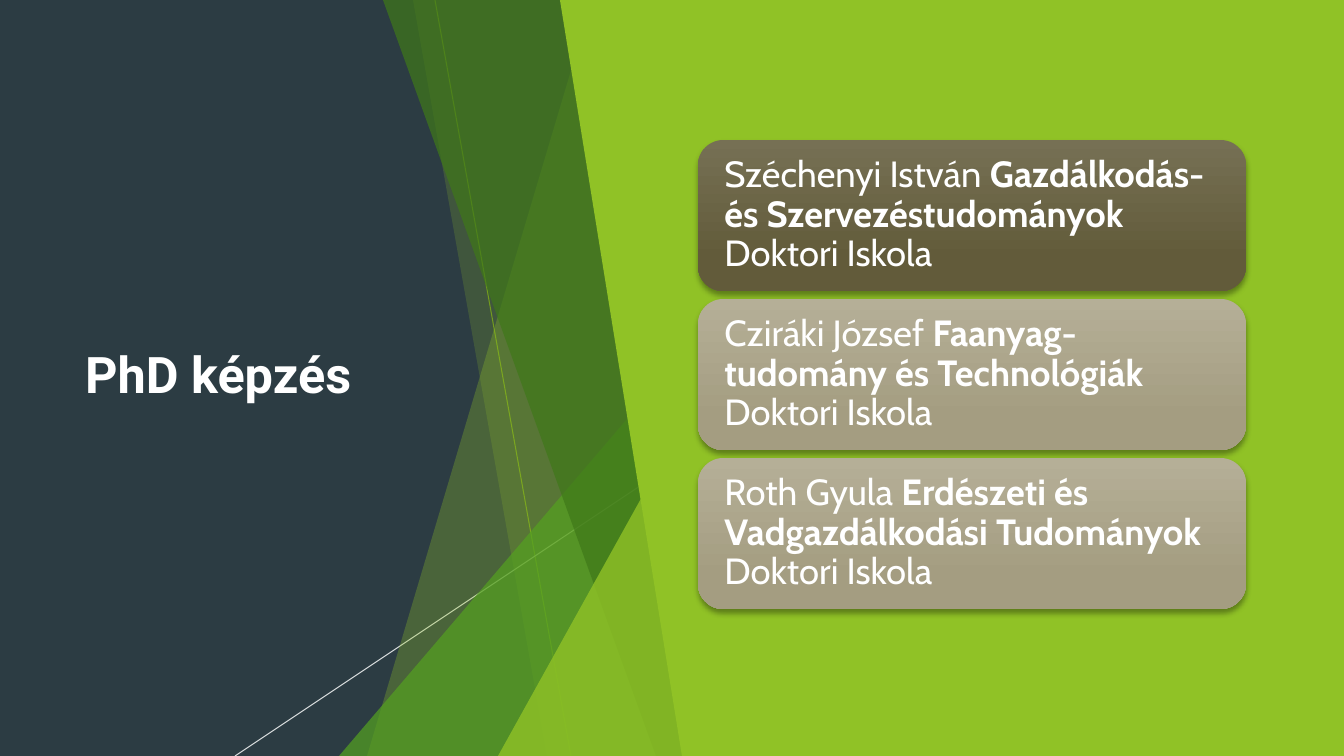
from dataclasses import dataclass

import pptx
import pptx.dml.color
import pptx.enum.shapes
import pptx.enum.text
import pptx.oxml.ns
import pptx.util
from lxml import etree

WIDTH, HEIGHT = 1344, 756
EMU_PER_PX = 12192000 / WIDTH


@dataclass(frozen=True)
class Theme:
    dark: str = "2C3C43"
    lime: str = "90C226"
    leaf: str = "54A021"
    forest: str = "3F7819"
    olive: str = "6C921D"
    white: str = "FFFFFF"
    shadow: str = "000000"
    strong_card: tuple = ("767054", "625B3A")
    soft_card: tuple = ("B5AF97", "A49D81")
    title_font: str = "Roboto"
    card_font: str = "Cabin"
    title_size: int = 36
    card_size: int = 26


THEME = Theme()


def px(length):
    return pptx.util.Emu(round(length * EMU_PER_PX))


def rgb(value):
    return pptx.dml.color.RGBColor.from_string(value)


def add_child(parent, tag, **attributes):
    child = etree.SubElement(parent, pptx.oxml.ns.qn(tag))
    for name, value in attributes.items():
        child.set(name, str(value))
    return child


def set_opacity(shape, percent):
    color = next(shape._element.spPr.iter(pptx.oxml.ns.qn("a:srgbClr")))
    add_child(color, "a:alpha", val=percent * 1000)


def style_run(run, font, size, bold):
    run.font.name = font
    run.font.size = pptx.util.Pt(size)
    run.font.bold = bold
    run.font.color.rgb = rgb(THEME.white)


def paint(shape, color, opacity):
    shape.shadow.inherit = False
    shape.fill.solid()
    shape.fill.fore_color.rgb = rgb(color)
    shape.line.fill.background()
    if opacity < 100:
        set_opacity(shape, opacity)


def add_ray(slide, start, end, color, opacity=100):
    ray = slide.shapes.add_connector(
        pptx.enum.shapes.MSO_CONNECTOR.STRAIGHT, *map(px, start + end))
    ray.line.color.rgb = rgb(color)
    ray.line.width = pptx.util.Pt(0.75)
    add_child(ray._element.spPr, "a:effectLst")
    if opacity < 100:
        set_opacity(ray, opacity)


def add_band(slide, top_left, bottom_left, right, color, opacity=100):
    """Full-height panel with a slanted left edge."""
    builder = slide.shapes.build_freeform(px(top_left), 0)
    corners = [(right, 0), (right, HEIGHT), (bottom_left, HEIGHT)]
    builder.add_line_segments([(px(x), px(y)) for x, y in corners])
    paint(builder.convert_to_shape(), color, opacity)


def add_wedge(slide, left, top, right, color, opacity):
    """Right triangle standing on the bottom edge, apex at the right."""
    wedge = slide.shapes.add_shape(
        pptx.enum.shapes.MSO_SHAPE.ISOSCELES_TRIANGLE,
        px(left), px(top), px(right - left), px(HEIGHT - top))
    wedge.adjustments[0] = 1
    paint(wedge, color, opacity)


def add_facets(slide, right):
    """Overlapping translucent facets that end at the given right edge."""
    add_ray(slide, (435, 0), (571, HEIGHT), THEME.olive)
    add_ray(slide, (760, 406), (235, HEIGHT), THEME.white, 80)
    add_band(slide, 592, 367, right, THEME.lime, 30)
    add_band(slide, 413, 547, right, THEME.lime, 20)
    add_wedge(slide, 339, 336, right, THEME.leaf, 72)
    add_band(slide, 383, 656, right, THEME.forest, 70)
    add_wedge(slide, 498, 396, right, THEME.lime, 80)
    # Solid green panel behind the cards
    add_band(slide, 560, 682, WIDTH, THEME.lime)


def place_title(slide, left, top, width, height, text):
    title = slide.shapes.title
    title.left, title.top = px(left), px(top)
    title.width, title.height = px(width), px(height)
    frame = title.text_frame
    frame.text = text
    frame.vertical_anchor = pptx.enum.text.MSO_ANCHOR.MIDDLE
    paragraph = frame.paragraphs[0]
    paragraph.alignment = pptx.enum.text.PP_ALIGN.LEFT
    style_run(paragraph.runs[0], THEME.title_font, THEME.title_size, True)


def add_card(slide, left, top, width, height, colors, parts):
    card = slide.shapes.add_shape(
        pptx.enum.shapes.MSO_SHAPE.ROUNDED_RECTANGLE,
        px(left), px(top), px(width), px(height))
    card.line.fill.background()
    card.fill.gradient()
    card.fill.gradient_angle = 270
    for stop, position, color in zip(card.fill.gradient_stops, (0, 0.78), colors):
        stop.position = position
        stop.color.rgb = rgb(color)

    # Soft shadow below the card
    card.shadow.inherit = False
    effects = card._element.spPr.find(pptx.oxml.ns.qn("a:effectLst"))
    shadow = add_child(effects, "a:outerShdw", blurRad=pptx.util.Pt(4),
                       dist=pptx.util.Pt(3), dir=90 * 60000, rotWithShape=0)
    color = add_child(shadow, "a:srgbClr", val=THEME.shadow)
    add_child(color, "a:alpha", val=35000)

    # Name, bold field, kind of school
    frame = card.text_frame
    frame.word_wrap = True
    frame.vertical_anchor = pptx.enum.text.MSO_ANCHOR.MIDDLE
    frame.margin_left = frame.margin_right = px(19)
    frame.margin_top = frame.margin_bottom = px(11)
    paragraph = frame.paragraphs[0]
    paragraph.alignment = pptx.enum.text.PP_ALIGN.LEFT
    paragraph.line_spacing = 0.9
    for index, part in enumerate(parts):
        run = paragraph.add_run()
        run.text = part
        style_run(run, THEME.card_font, THEME.card_size, index == 1)


def add_card_stack(slide, left, top, width, height, gap, schools):
    card_height = (height - gap * (len(schools) - 1)) / len(schools)
    for index, (name, field) in enumerate(schools):
        colors = THEME.soft_card if index else THEME.strong_card
        add_card(slide, left, top + index * (card_height + gap), width,
                 card_height, colors, (name, field, "Doktori Iskola"))


def main():
    presentation = pptx.Presentation()
    presentation.slide_width, presentation.slide_height = px(WIDTH), px(HEIGHT)
    slide = presentation.slides.add_slide(presentation.slide_layouts[5])
    slide.background.fill.solid()
    slide.background.fill.fore_color.rgb = rgb(THEME.dark)

    add_facets(slide, 698)
    place_title(slide, 75, 68, 423, 611, "PhD képzés")
    add_card_stack(slide, 698, 140, 548, 469, 8, [
        ("Széchenyi István ", "Gazdálkodás- és Szervezéstudományok "),
        ("Cziráki József ", "Faanyag- tudomány és Technológiák "),
        ("Roth Gyula ", "Erdészeti és Vadgazdálkodási Tudományok "),
    ])
    presentation.save("out.pptx")


if __name__ == "__main__":
    main()
